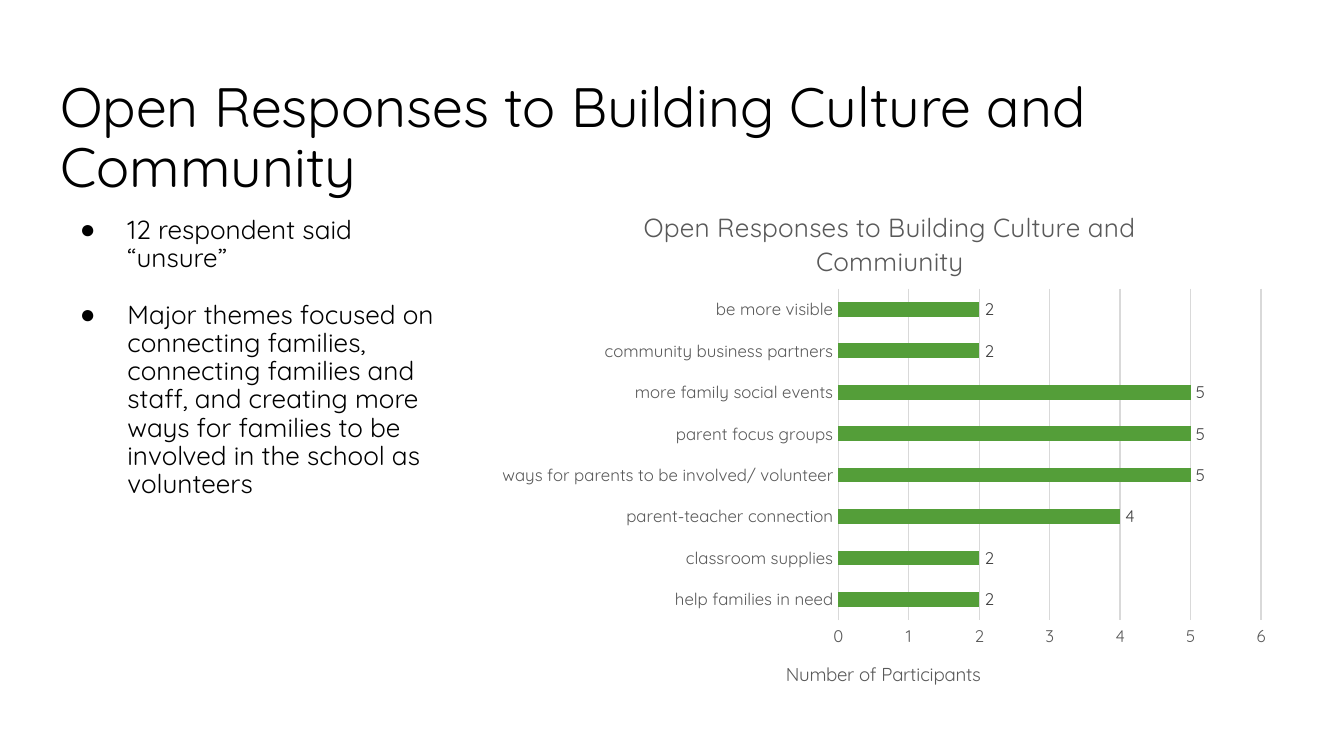
from lxml.etree import SubElement
from pptx import Presentation
from pptx.chart.data import CategoryChartData
from pptx.dml.color import RGBColor
from pptx.enum.chart import XL_CHART_TYPE, XL_LABEL_POSITION, XL_TICK_MARK
from pptx.enum.text import MSO_ANCHOR, MSO_AUTO_SIZE, PP_ALIGN
from pptx.oxml.ns import qn
from pptx.util import Emu, Pt

PX = 9525
FONT = "Quicksand"
BLACK, GREY, LABEL_GREY = "000000", "595959", "404040"
GRID, GREEN = "D9D9D9", "549E39"

HEADING = "Open Responses to Building Culture and Community"
FINDINGS = [
    "12 respondent said “unsure”",
    "Major themes focused on connecting families, connecting families and "
    "staff, and creating more ways for families to be involved in the school "
    "as volunteers",
]
RESPONSES = {
    "help families in need": 2,
    "classroom supplies": 2,
    "parent-teacher connection": 4,
    "ways for parents to be involved/ volunteer": 5,
    "parent focus groups": 5,
    "more family social events": 5,
    "community business partners": 2,
    "be more visible": 2,
}


def rgb(color):
    return RGBColor.from_string(color)


def set_font(font, size, color):
    font.name, font.size, font.bold = FONT, Pt(size), False
    font.color.rgb = rgb(color)


def set_layout(parent, index, **fractions):
    for previous in parent.findall(qn("c:layout")):
        parent.remove(previous)
    layout = SubElement(parent, qn("c:layout"))
    parent.insert(index, layout)
    manual = SubElement(layout, qn("c:manualLayout"))
    if "w" in fractions:
        SubElement(manual, qn("c:layoutTarget")).set("val", "inner")
    for side in "xy":
        SubElement(manual, qn(f"c:{side}Mode")).set("val", "edge")
    for side, fraction in fractions.items():
        SubElement(manual, qn(f"c:{side}")).set("val", str(fraction))


class SlideBuilder:
    """Holds the presentation style and the slide being filled."""

    def __init__(self, width, height):
        self.deck = Presentation()
        self.deck.slide_width, self.deck.slide_height = Emu(width * PX), Emu(height * PX)
        self.slide = self.deck.slides.add_slide(self.deck.slide_layouts[1])

    def place(self, holder, left, top, width, height):
        holder.left, holder.top = Emu(left * PX), Emu(top * PX)
        holder.width, holder.height = Emu(width * PX), Emu(height * PX)
        frame = holder.text_frame
        frame.word_wrap, frame.auto_size = True, MSO_AUTO_SIZE.NONE
        frame.vertical_anchor = MSO_ANCHOR.TOP
        frame.margin_left = frame.margin_right = Emu(10 * PX)
        frame.margin_top = frame.margin_bottom = Emu(10 * PX)
        return frame

    def title(self, text, box, size):
        frame = self.place(self.slide.shapes.title, *box)
        frame.text = text
        heading = frame.paragraphs[0]
        heading.alignment, heading.line_spacing = PP_ALIGN.LEFT, 0.9
        set_font(heading.font, size, BLACK)

    def bullets(self, items, box, size, gap):
        frame = self.place(self.slide.placeholders[1], *box)
        frame.text = "\n".join(items)
        for number, item in enumerate(frame.paragraphs):
            item.line_spacing = 0.9
            item.space_before = Pt(gap if number else 0)
            properties = item._p.get_or_add_pPr()
            properties.set("marL", str(48 * PX))
            properties.set("indent", str(-34 * PX))
            SubElement(properties, qn("a:buFont")).set("typeface", "Arial")
            SubElement(properties, qn("a:buChar")).set("char", "●")
            set_font(item.font, size, BLACK)

    def chart_title(self, owner, text, size, x, y):
        owner.has_title = True
        title = owner.chart_title if hasattr(owner, "chart_title") else owner.axis_title
        title.text_frame.text = text
        set_font(title.text_frame.paragraphs[0].font, size, GREY)
        set_layout(title._element, 1, x=x, y=y)

    def bar_chart(self, values, box, title, axis_title):
        data = CategoryChartData()
        data.categories = list(values)
        data.add_series("Series 1", list(values.values()))
        chart = self.slide.shapes.add_chart(
            XL_CHART_TYPE.BAR_CLUSTERED, *(Emu(length * PX) for length in box), data
        ).chart
        set_font(chart.font, 10, BLACK)
        chart.has_legend = False
        self.chart_title(chart, title, 14, 0.19, 0.05)
        self.chart_title(chart.value_axis, axis_title, 10, 0.37, 0.9)
        set_layout(chart._chartSpace.chart.plotArea, 0, x=0.44, y=0.21, w=0.53, h=0.62)

        for axis in (chart.category_axis, chart.value_axis):
            axis.major_tick_mark = axis.minor_tick_mark = XL_TICK_MARK.NONE
            set_font(axis.tick_labels.font, 9, GREY)
        chart.category_axis.has_major_gridlines = False
        chart.value_axis.has_major_gridlines = True
        chart.value_axis.minimum_scale, chart.value_axis.maximum_scale = 0, 6
        chart.value_axis.major_unit = 1
        chart.value_axis.format.line.fill.background()
        for rule in (chart.category_axis.format.line,
                     chart.value_axis.major_gridlines.format.line):
            rule.color.rgb, rule.width = rgb(GRID), Pt(0.75)

        plot = chart.plots[0]
        plot.gap_width, plot.vary_by_categories = 182, False
        bars = plot.series[0]
        bars.format.fill.solid()
        bars.format.fill.fore_color.rgb = rgb(GREEN)
        labels = bars.data_labels
        labels.show_value, labels.position = True, XL_LABEL_POSITION.OUTSIDE_END
        set_font(labels.font, 9, LABEL_GREY)


def main():
    builder = SlideBuilder(960, 540)
    builder.title(HEADING, (33, 47, 895, 60), 29.7)
    builder.bullets(FINDINGS, (33, 145, 294, 375), 14, 15)
    builder.bar_chart(
        RESPONSES,
        (348, 126, 570, 382),
        "Open Responses to Building Culture and Commiunity",
        "Number of Participants",
    )
    builder.deck.save("out.pptx")


if __name__ == "__main__":
    main()
